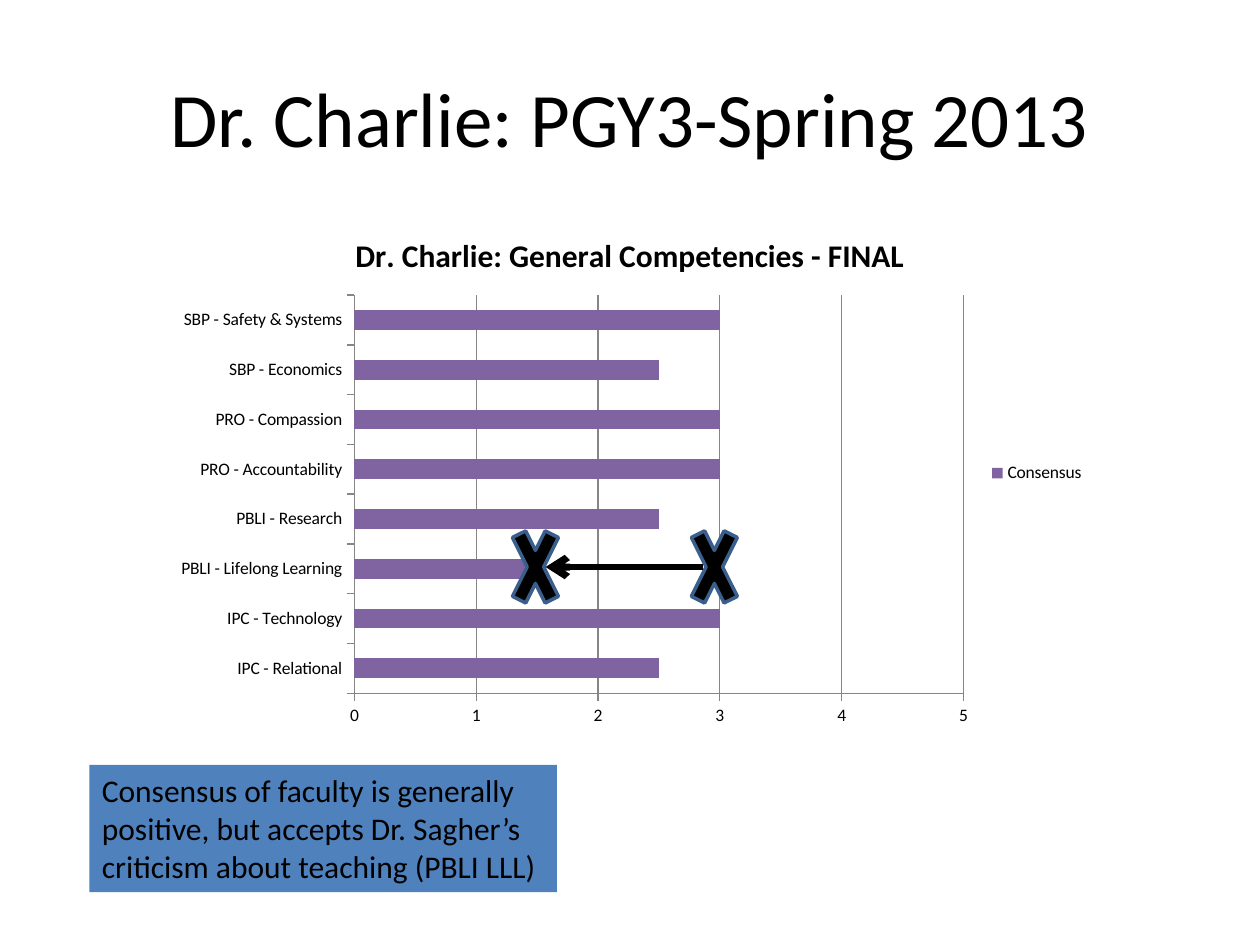
"""Build the slide on Dr. Charlie's general competencies in spring 2013."""
from lxml import etree
from pptx import Presentation
from pptx.chart.data import CategoryChartData
from pptx.dml.color import RGBColor
from pptx.enum.chart import XL_CHART_TYPE, XL_LEGEND_POSITION, XL_TICK_MARK
from pptx.enum.shapes import MSO_CONNECTOR, MSO_SHAPE
from pptx.enum.text import MSO_ANCHOR, MSO_AUTO_SIZE, PP_ALIGN
from pptx.oxml.ns import qn
from pptx.util import Pt

PX = 9144
FONT = "Calibri"
BLACK, GREY, PURPLE = "000000", "868686", "8064A2"
BLUE, DARK_BLUE = "4F81BD", "3A5F8C"
BAR = XL_CHART_TYPE.BAR_CLUSTERED
RIGHT = XL_LEGEND_POSITION.RIGHT
OUTSIDE = XL_TICK_MARK.OUTSIDE
STRAIGHT = MSO_CONNECTOR.STRAIGHT
CROSS, RECTANGLE = MSO_SHAPE.MATH_MULTIPLY, MSO_SHAPE.RECTANGLE
MIDDLE, TOP = MSO_ANCHOR.MIDDLE, MSO_ANCHOR.TOP
CENTER, LEFT = PP_ALIGN.CENTER, PP_ALIGN.LEFT


def rgb(value):
    return RGBColor.from_string(value)


def write(frame, text, size, align, bold=False):
    para = frame.paragraphs[0]
    para.alignment = align
    span = para.add_run()
    span.text = text
    span.font.name = FONT
    span.font.size = Pt(size)
    span.font.bold = bold
    span.font.color.rgb = rgb(BLACK)


deck = Presentation()
deck.slide_width, deck.slide_height = 1000 * PX, 750 * PX
page = deck.slides.add_slide(deck.slide_layouts[5])

title = page.shapes.title
title.left, title.top, title.width, title.height = 50 * PX, 30 * PX, 900 * PX, 125 * PX
title.text_frame.vertical_anchor = MIDDLE
write(title.text_frame, "Dr. Charlie: PGY3-Spring 2013", 44, CENTER)

scores = {
    "IPC - Relational": 2.5,
    "IPC - Technology": 3,
    "PBLI - Lifelong Learning": 1.5,
    "PBLI - Research": 2.5,
    "PRO - Accountability": 3,
    "PRO - Compassion": 3,
    "SBP - Economics": 2.5,
    "SBP - Safety & Systems": 3,
}
data = CategoryChartData()
data.categories = list(scores)
data.add_series("Consensus", list(scores.values()))
chart = page.shapes.add_chart(BAR, 129 * PX, 167 * PX, 742 * PX, 417 * PX, data).chart
chart.font.name = FONT
chart.font.size = Pt(10)
chart.font.color.rgb = rgb(BLACK)
chart.has_title = True
write(chart.chart_title.text_frame, "Dr. Charlie: General Competencies - FINAL", 18, CENTER, True)
chart.chart_title.include_in_layout = False
chart.has_legend = True
chart.legend.position = RIGHT
chart.legend.include_in_layout = False

plot = chart.plots[0]
plot.gap_width = 150
plot.vary_by_categories = False
bars = plot.series[0].format.fill
bars.solid()
bars.fore_color.rgb = rgb(PURPLE)

scale = chart.value_axis
scale.minimum_scale, scale.maximum_scale, scale.major_unit = 0, 5, 1
scale.has_major_gridlines = True
for axis in (scale, chart.category_axis):
    axis.major_tick_mark = OUTSIDE
for ruled in (scale, chart.category_axis, scale.major_gridlines):
    ruled.format.line.color.rgb = rgb(GREY)
    ruled.format.line.width = Pt(0.75)

for left in (542, 400):
    cross = page.shapes.add_shape(CROSS, left * PX, 400 * PX, 50 * PX, 100 * PX)
    cross.shadow.inherit = False
    cross.fill.solid()
    cross.fill.fore_color.rgb = rgb(BLACK)
    cross.line.color.rgb = rgb(DARK_BLUE)
    cross.line.width = Pt(2)

arrow = page.shapes.add_connector(STRAIGHT, 558 * PX, 450 * PX, 433 * PX, 450 * PX)
arrow.line.color.rgb = rgb(BLACK)
arrow.line.width = Pt(4)
etree.SubElement(arrow.line._get_or_add_ln(), qn("a:tailEnd"), type="arrow")
etree.SubElement(arrow._element.spPr, qn("a:effectLst"))

box = page.shapes.add_shape(RECTANGLE, 71 * PX, 607 * PX, 371 * PX, 101 * PX)
box.shadow.inherit = False
box.fill.solid()
box.fill.fore_color.rgb = rgb(BLUE)
box.line.fill.background()
box.text_frame.word_wrap = True
box.text_frame.auto_size = MSO_AUTO_SIZE.SHAPE_TO_FIT_TEXT
box.text_frame.vertical_anchor = TOP
write(
    box.text_frame,
    "Consensus of faculty is generally positive, but accepts Dr. Sagher’s criticism about teaching (PBLI LLL)",
    18,
    LEFT,
)

deck.save("out.pptx")
